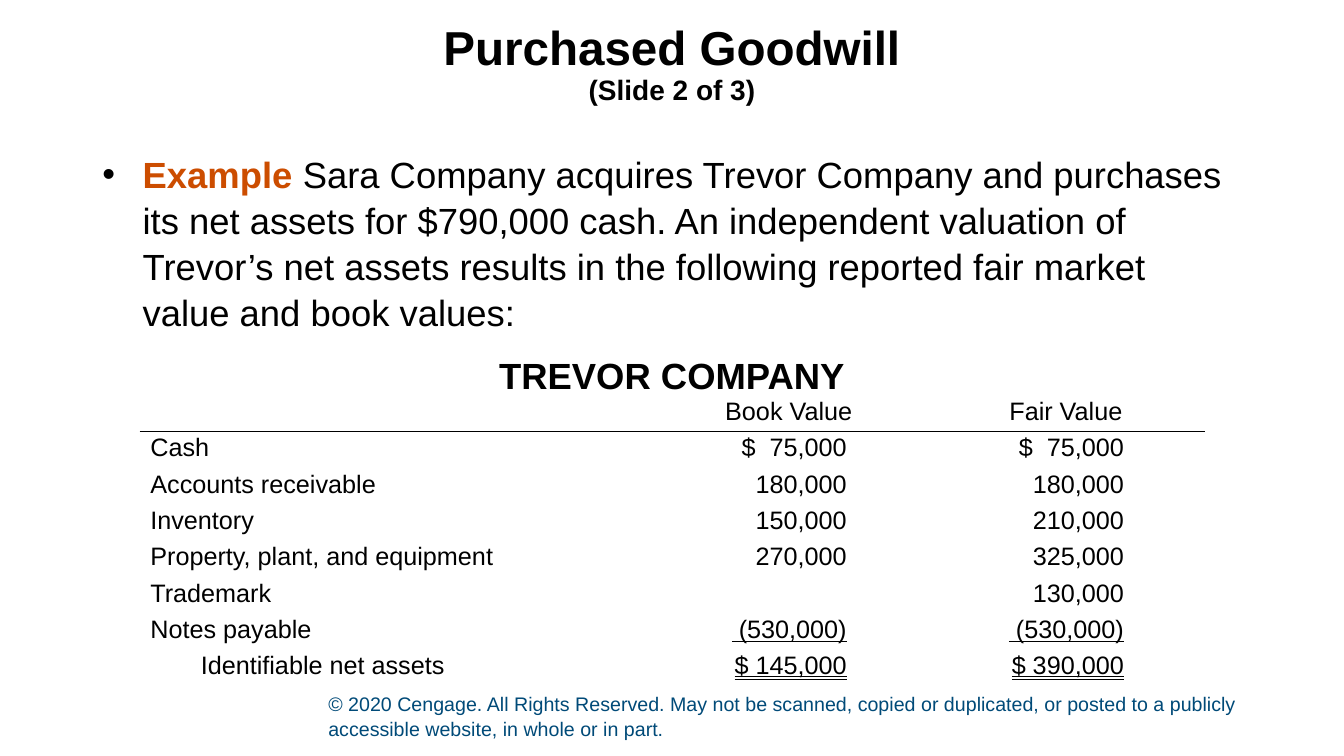
from lxml.etree import SubElement
from pptx import Presentation
from pptx.dml.color import RGBColor
from pptx.enum.text import MSO_ANCHOR, MSO_UNDERLINE, PP_ALIGN
from pptx.oxml.ns import qn
from pptx.util import Inches, Pt

BLACK, ORANGE, BLUE = "000000", "CC4D00", "004A78"
COLS, ROWS = 160, 90


def color(code):
    return RGBColor.from_string(code)


class Page:
    face = "Arial"

    def __init__(self, deck):
        self.slide = deck.slides.add_slide(deck.slide_layouts[6])
        self.col = deck.slide_width / COLS
        self.row = deck.slide_height / ROWS

    def place(self, left, top, width, height):
        return (round(left * self.col), round(top * self.row),
                round(width * self.col), round(height * self.row))

    def style(self, font, size=None, code=BLACK, bold=False):
        font.name = self.face
        font.color.rgb = color(code)
        font.bold = bold
        if size:
            font.size = Pt(size)

    def text(self, spot, anchor=MSO_ANCHOR.TOP):
        frame = self.slide.shapes.add_textbox(*self.place(*spot)).text_frame
        frame.word_wrap = True
        frame.vertical_anchor = anchor
        return frame

    def title(self, spot, head, note):
        para = self.text(spot, MSO_ANCHOR.MIDDLE).paragraphs[0]
        para.alignment = PP_ALIGN.CENTER
        para.line_spacing = 0.9
        self.style(para.font, bold=True)
        first = para.add_run()
        first.text, first.font.size = head, Pt(34)
        para.add_line_break()
        last = para.add_run()
        last.text, last.font.size = note, Pt(20)

    def body(self, spot, lead, story, label):
        frame = self.text(spot)
        para = frame.paragraphs[0]
        self.bullet(para)
        para.line_spacing = 1.05
        para.space_after = Pt(6)
        para.font.name, para.font.size = self.face, Pt(26)
        for part, code, bold in ((lead, ORANGE, True), (story, BLACK, False)):
            run = para.add_run()
            run.text = part
            self.style(run.font, code=code, bold=bold)
        para = frame.add_paragraph()
        para.text = label
        para.alignment = PP_ALIGN.CENTER
        para.line_spacing = 1.05
        para.space_before = para.space_after = Pt(6)
        self.style(para.font, 26, bold=True)

    def bullet(self, para):
        props = para._p.get_or_add_pPr()
        props.set("marL", str(Inches(0.4)))
        props.set("indent", str(-Inches(0.4)))
        tint = SubElement(props, qn("a:buClr"))
        SubElement(tint, qn("a:srgbClr"), val=BLACK)
        SubElement(props, qn("a:buFont"), typeface=self.face)
        SubElement(props, qn("a:buChar"), char="•")

    def table(self, spot, widths, data, lines):
        shape = self.slide.shapes.add_table(len(data), len(widths), *self.place(*spot))
        grid = shape.table
        grid.first_row = grid.horz_banding = False
        for column, width in zip(grid.columns, widths):
            column.width = round(width * self.col)
        for r, items in enumerate(data):
            for c, item in enumerate(items):
                self.cell(grid.cell(r, c), item, r, c, lines.get(r))
        for c in range(len(widths)):
            self.rule(grid.cell(0, c), "a:lnB")
            self.rule(grid.cell(1, c), "a:lnT")
        total = grid.cell(len(data) - 1, 0).text_frame.paragraphs[0]
        total._p.get_or_add_pPr().set("marL", str(Inches(0.5)))

    def cell(self, cell, item, r, c, line):
        cell.fill.background()
        cell.margin_top = cell.margin_bottom = Inches(0.03)
        cell.margin_left = cell.margin_right = Inches(0.1)
        para = cell.text_frame.paragraphs[0]
        para.text = item
        self.style(para.font, 18)
        if r == 0:
            para.alignment = PP_ALIGN.CENTER
        elif c:
            para.alignment = PP_ALIGN.RIGHT
            cell.margin_right = Inches(0.8)
            if line:
                para.font.underline = line

    def rule(self, cell, side):
        props = cell._tc.get_or_add_tcPr()
        edge = props.makeelement(qn(side), {"w": str(Pt(1))})
        fill = SubElement(edge, qn("a:solidFill"))
        SubElement(fill, qn("a:srgbClr"), val=BLACK)
        props.insert(0, edge)

    def footer(self, spot, notice):
        para = self.text(spot, MSO_ANCHOR.BOTTOM).paragraphs[0]
        para.text = notice
        para.line_spacing = 1.05
        self.style(para.font, 14, BLUE)


def main():
    deck = Presentation()
    deck.slide_width, deck.slide_height = Inches(13.33), Inches(7.5)
    page = Page(deck)
    page.footer((37.9, 82.7, 115.6, 6),
                "© 2020 Cengage. All Rights Reserved. May not be scanned, copied or "
                "duplicated, or posted to a publicly accessible website, in whole or in part.")
    page.title((11, 1.8, 138, 12), "Purchased Goodwill", "(Slide 2 of 3)")
    page.body((11, 17.3, 138, 28.7), "Example ",
              "Sara Company acquires Trevor Company and purchases its net assets for "
              "$790,000 cash. An independent valuation of Trevor’s net assets results in "
              "the following reported fair market value and book values:",
              "TREVOR COMPANY")
    data = [
        ("", "Book Value", "Fair Value"),
        ("Cash", "$  75,000", "$  75,000"),
        ("Accounts receivable", "180,000", "180,000"),
        ("Inventory", "150,000", "210,000"),
        ("Property, plant, and equipment", "270,000", "325,000"),
        ("Trademark", "", "130,000"),
        ("Notes payable", " (530,000)", " (530,000)"),
        ("Identifiable net assets", "$ 145,000", "$ 390,000"),
    ]
    lines = {6: MSO_UNDERLINE.SINGLE_LINE, 7: MSO_UNDERLINE.DOUBLE_LINE}
    page.table((16.7, 47, 126.7, 28.8), (60.7, 33, 33), data, lines)
    deck.save("out.pptx")


if __name__ == "__main__":
    main()
